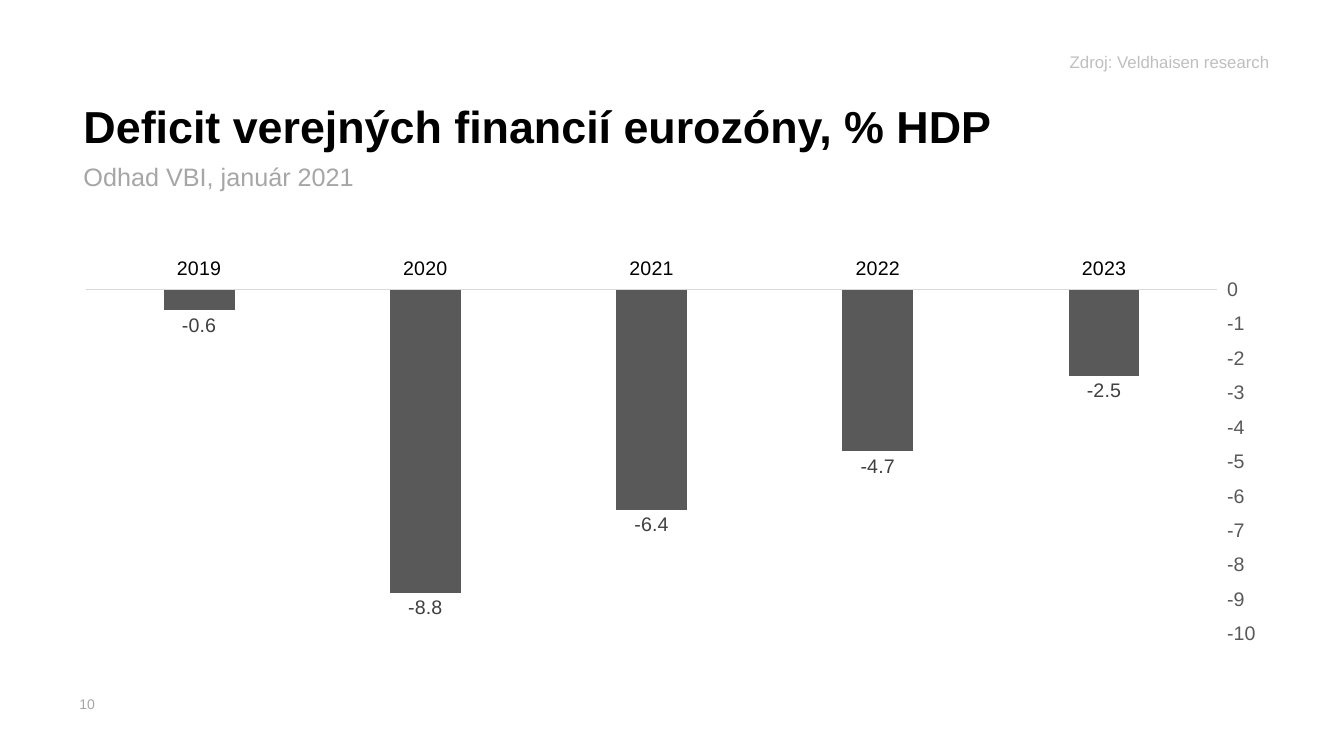
from lxml.etree import SubElement
from pptx import Presentation
from pptx.chart.data import CategoryChartData
from pptx.dml.color import RGBColor
from pptx.enum.chart import (XL_CHART_TYPE, XL_LABEL_POSITION,
                             XL_TICK_LABEL_POSITION, XL_TICK_MARK)
from pptx.enum.text import MSO_ANCHOR, PP_ALIGN
from pptx.oxml.ns import qn
from pptx.util import Inches, Pt

INK = {"black": "000000", "bar": "595959", "label": "404040",
       "line": "D9D9D9", "sub": "A6A6A6", "source": "BFBFBF"}
DATA = {"2019": -0.6, "2020": -8.8, "2021": -6.4, "2022": -4.7, "2023": -2.5}
PLOT = {"x": 0.002, "y": 0.123, "w": 0.946, "h": 0.85}


def color(name):
    return RGBColor.from_string(INK[name])


def style(font, size, ink, bold=False):
    font.name = "Arial"
    font.size = Pt(size)
    font.bold = bold
    font.color.rgb = color(ink)


def write(slide, box, text, size, ink, bold=False, align=PP_ALIGN.LEFT,
          anchor=MSO_ANCHOR.TOP, space=0.9):
    frame = slide.shapes.add_textbox(*map(Inches, box)).text_frame
    frame.word_wrap = True
    frame.vertical_anchor = anchor
    para = frame.paragraphs[0]
    para.alignment = align
    para.line_spacing = space
    run = para.add_run()
    run.text = text
    style(run.font, size, ink, bold)


def head(slide, box):
    left, top, width, high = box
    write(slide, (left + width - 4.59 + 0.1, top, 4.59, 0.3),
          "Zdroj: Veldhaisen research", 12, "source", align=PP_ALIGN.RIGHT)
    write(slide, (left, top + 0.43, width, 0.65),
          "Deficit verejných financií eurozóny, % HDP", 32, "black",
          bold=True, anchor=MSO_ANCHOR.MIDDLE, space=1.0)
    write(slide, (left, top + high - 0.44, width, 0.44),
          "Odhad VBI, január 2021", 18, "sub")


def place(chart):
    area = chart.plots[0]._element.getparent()
    old = area.find(qn("c:layout"))
    if old is not None:
        area.remove(old)
    layout = SubElement(area, qn("c:layout"))
    area.insert(0, layout)
    manual = SubElement(layout, qn("c:manualLayout"))
    parts = [("layoutTarget", "inner"), ("xMode", "edge"), ("yMode", "edge")]
    for tag, val in parts + list(PLOT.items()):
        SubElement(manual, qn(f"c:{tag}")).set("val", str(val))


def graph(slide, box):
    data = CategoryChartData()
    data.categories = list(DATA)
    data.add_series("Series 1", list(DATA.values()))
    chart = slide.shapes.add_chart(
        XL_CHART_TYPE.COLUMN_CLUSTERED, *map(Inches, box), data).chart
    chart.has_legend = chart.has_title = False
    style(chart.font, 14, "black")

    years, scale = chart.category_axis, chart.value_axis
    for axis, ink in ((years, "black"), (scale, "bar")):
        axis.has_major_gridlines = False
        axis.major_tick_mark = axis.minor_tick_mark = XL_TICK_MARK.NONE
        axis.tick_label_position = XL_TICK_LABEL_POSITION.HIGH
        style(axis.tick_labels.font, 14, ink)
    years.format.line.color.rgb = color("line")
    years.format.line.width = Pt(0.75)
    scale.minimum_scale, scale.maximum_scale, scale.major_unit = -10, 0, 1
    scale.tick_labels.number_format = "0"
    scale.tick_labels.number_format_is_linked = False
    scale.format.line.fill.background()

    plot = chart.plots[0]
    plot.gap_width, plot.overlap = 219, -27
    plot.vary_by_categories = False
    bars = plot.series[0]
    bars.invert_if_negative = False
    bars.format.fill.solid()
    bars.format.fill.fore_color.rgb = color("bar")
    labels = bars.data_labels
    labels.show_value = True
    labels.position = XL_LABEL_POSITION.OUTSIDE_END
    style(labels.font, 14, "label")
    place(chart)


def foot(slide, box):
    write(slide, box, "10", 10, "sub", anchor=MSO_ANCHOR.MIDDLE, space=1.0)


def main():
    deck = Presentation()
    deck.slide_width, deck.slide_height = Inches(13.33), Inches(7.5)
    slide = deck.slides.add_slide(deck.slide_layouts[6])
    foot(slide, (0.69, 6.85, 2.46, 0.27))
    head(slide, (0.73, 0.49, 11.86, 1.54))
    graph(slide, (0.83, 2.38, 11.86, 4.02))
    deck.save("out.pptx")


if __name__ == "__main__":
    main()
